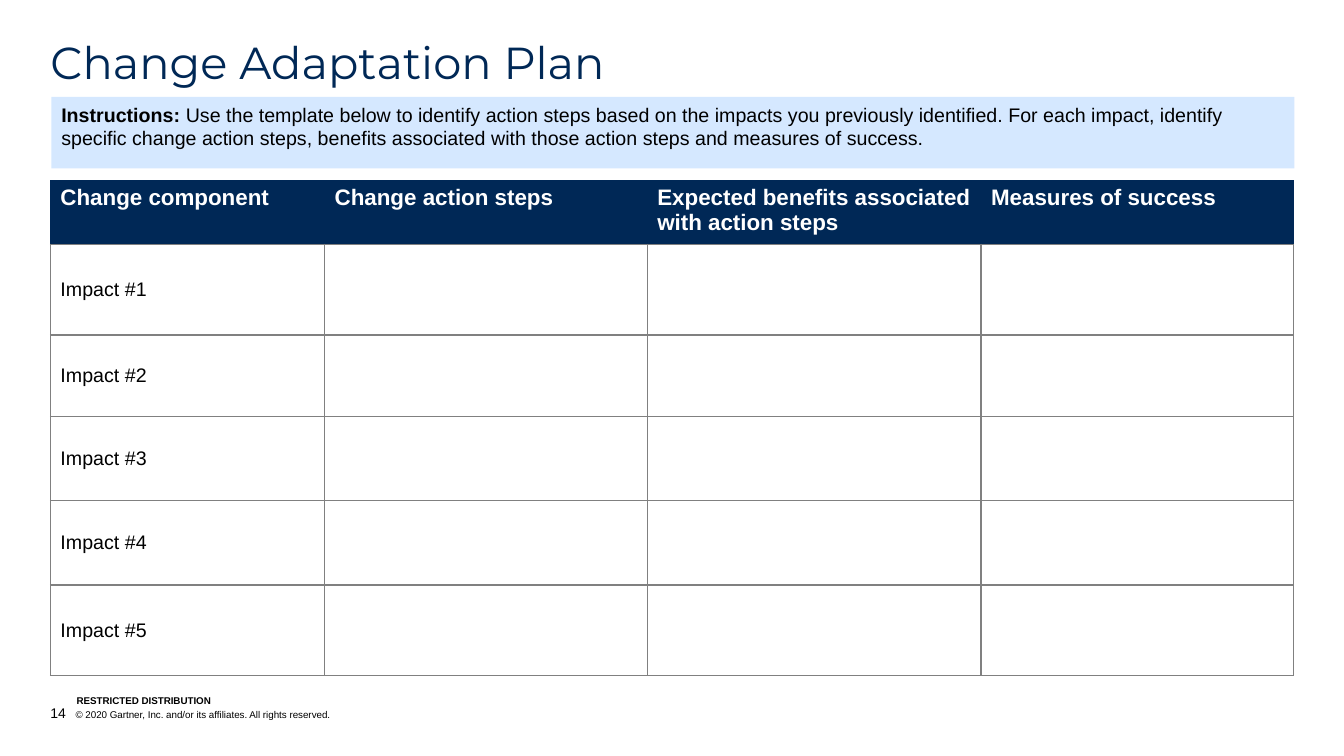
from lxml import etree
from pptx import Presentation
from pptx.dml.color import RGBColor
from pptx.enum.shapes import MSO_SHAPE
from pptx.enum.text import MSO_ANCHOR
from pptx.oxml.ns import qn
from pptx.util import Inches, Pt

RECT = MSO_SHAPE.RECTANGLE
TOP = MSO_ANCHOR.TOP
MIDDLE = MSO_ANCHOR.MIDDLE
BOTTOM = MSO_ANCHOR.BOTTOM
NAVY = RGBColor(0x00, 0x28, 0x56)
PALE = RGBColor(0xD5, 0xE8, 0xFF)
GREY = RGBColor(0x80, 0x80, 0x80)
BLACK = RGBColor(0, 0, 0)
WHITE = RGBColor(255, 255, 255)

HEADS = ["Change component", "Change action steps",
         "Expected benefits associated with action steps",
         "Measures of success"]
WIDTHS = [2.72, 3.2, 3.31, 3.1]
HEIGHTS = [0.59, 0.9, 0.81, 0.83, 0.84, 0.9]
GUIDE = ("Use the template below to identify action steps based on the "
         "impacts you previously identified. For each impact, identify "
         "specific change action steps, benefits associated with those "
         "action steps and measures of success.")


def add_run(para, text, size, color=BLACK, bold=False, font="Arial"):
    """Add one styled run to a paragraph."""
    run = para.add_run()
    run.text = text
    run.font.name = font
    run.font.size = Pt(size)
    run.font.bold = bold
    run.font.color.rgb = color


def set_frame(shape, anchor, left=0, top=0):
    """Set wrap, anchor and insets, and return the first paragraph."""
    frame = shape.text_frame
    frame.word_wrap = True
    frame.vertical_anchor = anchor
    frame.margin_left = Inches(left)
    frame.margin_top = Inches(top)
    frame.margin_right = frame.margin_bottom = 0
    return frame.paragraphs[0]


def add_text(slide, box, anchor):
    """Add a text box and return its first paragraph."""
    shape = slide.shapes.add_textbox(*map(Inches, box))
    return set_frame(shape, anchor)


def add_panel(slide, box):
    """Add the pale panel and return its first paragraph."""
    shape = slide.shapes.add_shape(RECT, *map(Inches, box))
    shape.shadow.inherit = False
    shape.fill.solid()
    shape.fill.fore_color.rgb = PALE
    shape.line.fill.background()
    para = set_frame(shape, TOP, 0.1, 0.06)
    para.alignment = 1
    return para


def add_tab(para, inches):
    """Give a paragraph a hanging indent with a matching tab stop."""
    props = para._p.get_or_add_pPr()
    pos = str(Inches(inches))
    props.set("marL", pos)
    props.set("indent", "-" + pos)
    stops = etree.SubElement(props, qn("a:tabLst"))
    etree.SubElement(stops, qn("a:tab"), pos=pos, algn="l")


def set_edges(cell, sides):
    """Draw grey lines on the given cell sides and none on the rest."""
    props = cell._tc.get_or_add_tcPr()
    for side in "LRTB":
        line = etree.SubElement(props, qn("a:ln" + side), w=str(Pt(1)))
        if side in sides:
            fill = etree.SubElement(line, qn("a:solidFill"))
            etree.SubElement(fill, qn("a:srgbClr"), val=str(GREY))
        else:
            etree.SubElement(line, qn("a:noFill"))


def add_grid(slide):
    """Add the plan table with its header and impact rows."""
    frame = slide.shapes.add_table(
        len(HEIGHTS), len(WIDTHS), Inches(0.5), Inches(1.79),
        Inches(sum(WIDTHS)), Inches(sum(HEIGHTS)))
    table = frame.table
    table.horz_banding = False
    for col, width in zip(table.columns, WIDTHS):
        col.width = Inches(width)
    for row, height in zip(table.rows, HEIGHTS):
        row.height = Inches(height)
    for cell, head in zip(table.rows[0].cells, HEADS):
        set_edges(cell, "B")
        cell.fill.solid()
        cell.fill.fore_color.rgb = NAVY
        cell.margin_right = Inches(0.05)
        add_run(cell.text_frame.paragraphs[0], head, 16, WHITE, True)
    for num in range(1, len(HEIGHTS)):
        for cell in table.rows[num].cells:
            set_edges(cell, "LRTB")
            cell.fill.background()
            cell.vertical_anchor = MIDDLE
        para = table.cell(num, 0).text_frame.paragraphs[0]
        add_run(para, f"Impact #{num}", 14)


def main():
    """Build and save the slide."""
    deck = Presentation()
    deck.slide_width = Inches(13.33)
    deck.slide_height = Inches(7.5)
    slide = deck.slides.add_slide(deck.slide_layouts[6])

    foot = add_text(slide, (0.5, 6.99, 7.99, 0.17), BOTTOM)
    add_tab(foot, 0.25)
    add_run(foot, "14", 10)
    add_run(foot, "\t© 2020 Gartner, Inc. and/or its affiliates. "
            "All rights reserved.", 7)
    mark = add_text(slide, (0.76, 6.89, 2.53, 0.12), BOTTOM)
    add_run(mark, "RESTRICTED DISTRIBUTION", 7, bold=True)

    title = add_text(slide, (0.5, 0.4, 12.33, 0.48), TOP)
    title.line_spacing = 0.9
    add_run(title, "Change Adaptation Plan", 32, NAVY, font="Montserrat")

    guide = add_panel(slide, (0.51, 0.96, 12.33, 0.71))
    add_run(guide, "Instructions: ", 14, bold=True)
    add_run(guide, GUIDE, 14)
    add_grid(slide)
    deck.save("out.pptx")


if __name__ == "__main__":
    main()
